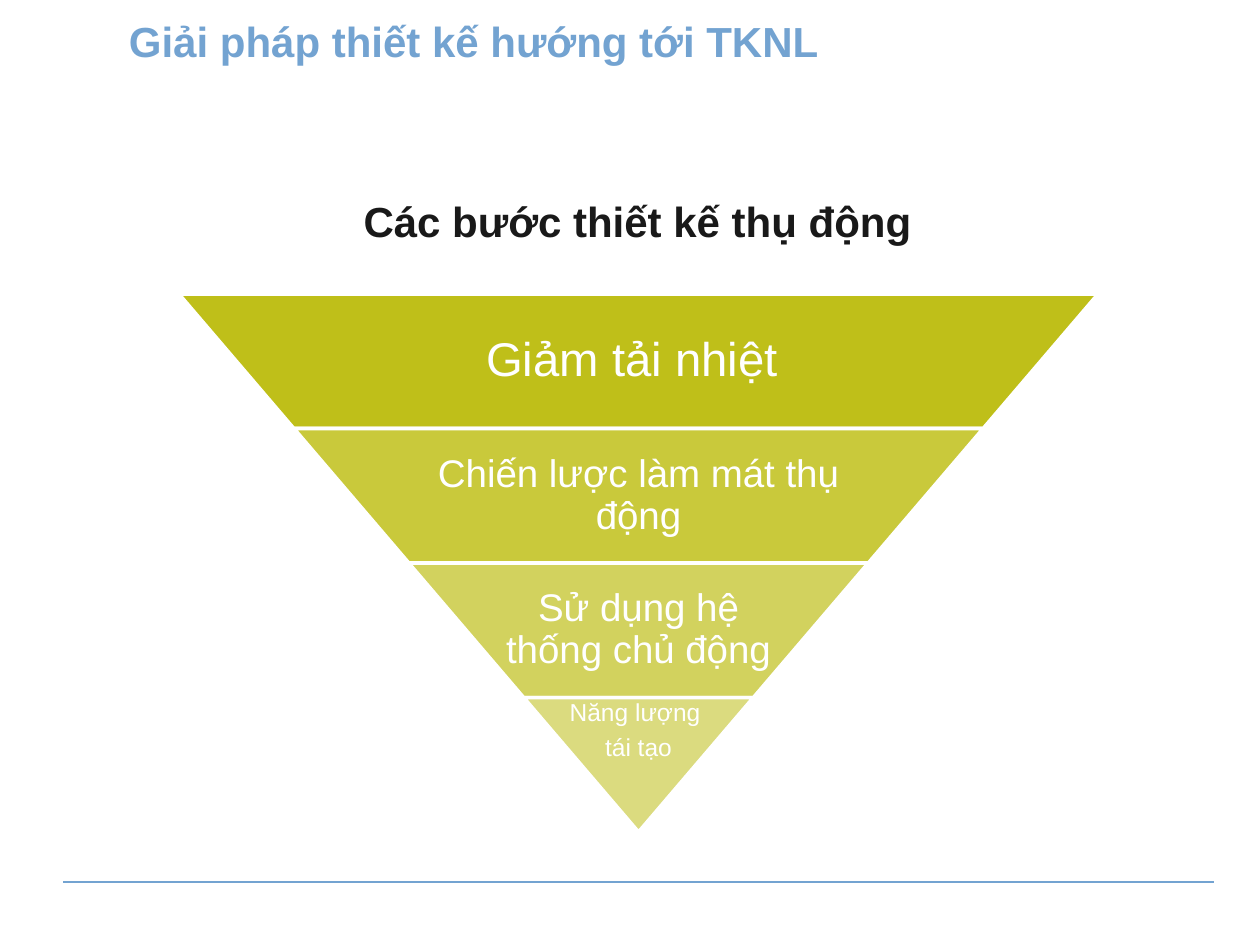
from dataclasses import dataclass

from lxml.etree import SubElement
from pptx import Presentation
from pptx.dml.color import RGBColor
from pptx.enum.shapes import MSO_CONNECTOR as Connector, MSO_SHAPE as Shape
from pptx.enum.text import MSO_ANCHOR as Anchor, PP_ALIGN as Align
from pptx.oxml.ns import qn
from pptx.util import Pt

# Content: tier lines, type size, fill opacity %, text width share, margin px, anchor
HEADING = "Giải pháp thiết kế hướng tới TKNL"
TITLE = "Các bước thiết kế thụ động"
TIERS = [
    (["Giảm tải nhiệt "], 27, 90, 0.65, 5, Anchor.MIDDLE),
    (["Chiến lược làm mát thụ động"], 22, 77, 0.65, 4, Anchor.MIDDLE),
    (["Sử dụng hệ thống chủ động"], 22, 63, 0.65, 4, Anchor.MIDDLE),
    (["Năng lượng ", "tái tạo"], 14, 50, 1, 3, Anchor.TOP),
]


@dataclass(frozen=True)
class Theme:
    font: str = "Arial"
    blue: str = "73A3D1"
    ink: str = "191919"
    olive: str = "B9B900"
    white: str = "FFFFFF"
    head_size: int = 24


THEME = Theme()

# Layout in px
SLIDE = (1260, 945)
HEADING_BOX = (116, 10, 955, 102)
TITLE_BOX = (42, 189, 1191, 86)
FUNNEL = (179, 294, 919, 538)
RULE = (63, 882, 1214, 882)


def px(value):
    return round(value * 914400 / 126)


def color(code):
    return RGBColor.from_string(code)


def write(frame, lines, size, code, bold=False, align=Align.LEFT,
          margins=(13, 6), anchor=Anchor.TOP, spacing=None):
    frame.word_wrap = True
    frame.vertical_anchor = anchor
    frame.margin_left = frame.margin_right = px(margins[0])
    frame.margin_top = frame.margin_bottom = px(margins[1])
    for i, line in enumerate(lines):
        para = frame.add_paragraph() if i else frame.paragraphs[0]
        para.text = line
        para.alignment = align
        para.line_spacing = spacing
        para.space_before = Pt(4.9 if i else 0)
        para.font.name = THEME.font
        para.font.size = Pt(size)
        para.font.bold = bold
        para.font.color.rgb = color(code)


def add_tier(group, index, tier):
    lines, size, opacity, share, margin, anchor = tier
    left, top, width, height = FUNNEL
    count = len(TIERS)
    tier_height = height / count
    tier_width = width * (count - index) / count
    center = left + width / 2
    y = top + index * tier_height

    # Band, turned so that the wide side is on top
    band = group.shapes.add_shape(
        Shape.TRAPEZOID, px(center - tier_width / 2), px(y),
        px(tier_width), px(tier_height))
    band.rotation = 180
    band.adjustments[0] = width / (2 * count) / tier_height
    band.shadow.inherit = False
    band.fill.solid()
    band.fill.fore_color.rgb = color(THEME.olive)
    fill_color = band.fill._xPr.find(qn("a:solidFill")).find(qn("a:srgbClr"))
    SubElement(fill_color, qn("a:alpha"), val=str(opacity * 1000))
    band.line.color.rgb = color(THEME.white)
    band.line.width = Pt(2)

    # Upright label
    label_width = tier_width * share
    label = group.shapes.add_textbox(
        px(center - label_width / 2), px(y), px(label_width), px(tier_height))
    write(label.text_frame, lines, size, THEME.white, align=Align.CENTER,
          margins=(margin, margin), anchor=anchor, spacing=0.9)


def main():
    deck = Presentation()
    deck.slide_width, deck.slide_height = map(px, SLIDE)
    slide = deck.slides.add_slide(deck.slide_layouts[5])

    # Bottom rule
    rule = slide.shapes.add_connector(Connector.STRAIGHT, *map(px, RULE))
    rule.line.color.rgb = color(THEME.blue)
    rule.line.width = Pt(1.5)
    SubElement(rule._element.spPr, qn("a:effectLst"))

    # Title
    title = slide.shapes.title
    title.left, title.top, title.width, title.height = map(px, TITLE_BOX)
    write(title.text_frame, [TITLE], THEME.head_size, THEME.ink,
          bold=True, align=Align.CENTER)

    # Funnel
    funnel = slide.shapes.add_group_shape()
    for index, tier in enumerate(TIERS):
        add_tier(funnel, index, tier)

    # Section heading
    heading = slide.shapes.add_textbox(*map(px, HEADING_BOX))
    write(heading.text_frame, [HEADING], THEME.head_size, THEME.blue, bold=True)

    deck.save("out.pptx")


if __name__ == "__main__":
    main()
